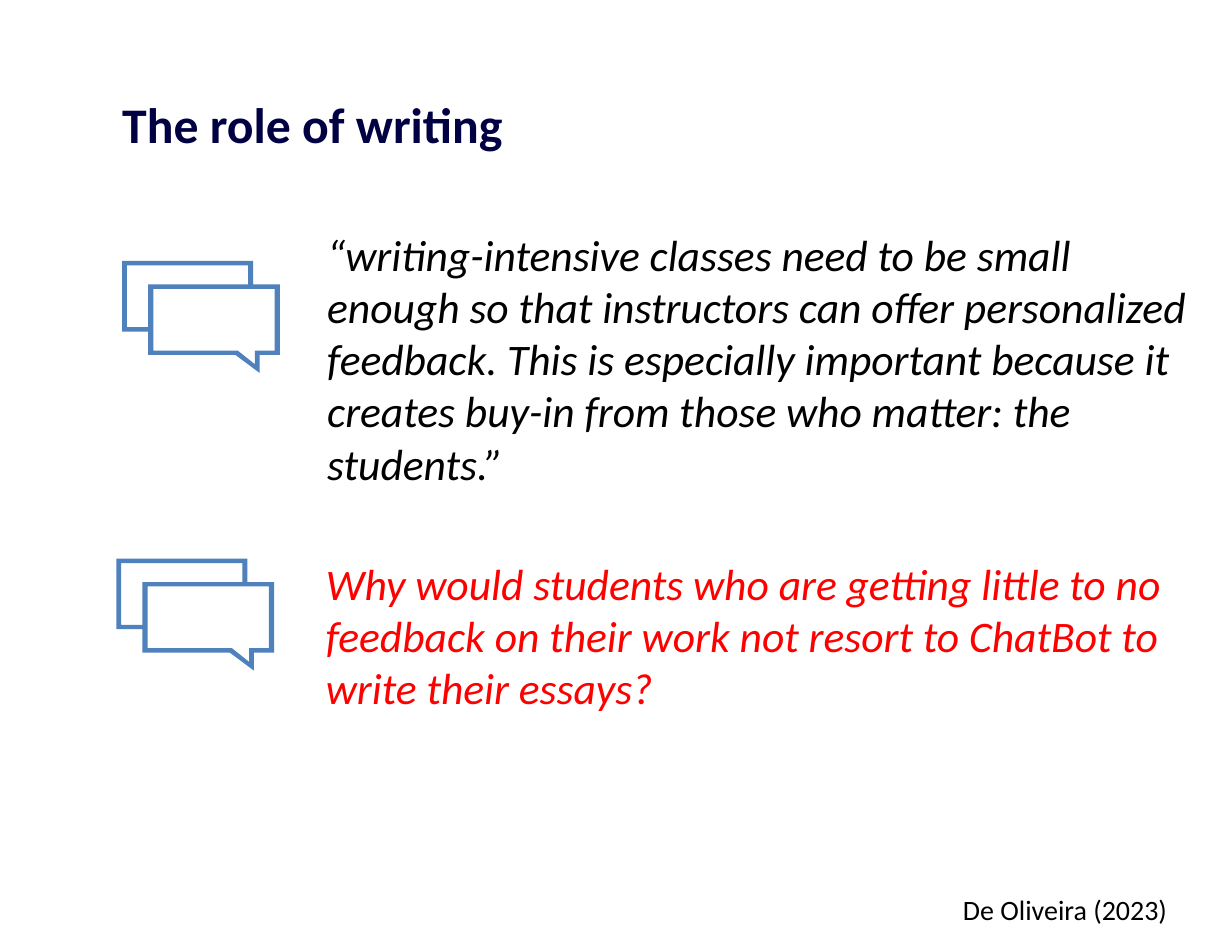
from lxml.etree import SubElement
from pptx import Presentation
from pptx.dml.color import RGBColor
from pptx.enum.text import MSO_ANCHOR, MSO_AUTO_SIZE, PP_ALIGN
from pptx.oxml.ns import qn
from pptx.util import Cm, Pt

COLORS = {"navy": "000043", "black": "000000", "red": "FF0000", "blue": "4F81BD"}

TITLE = "The role of writing"
QUOTE = (
    "“writing-intensive classes need to be small enough so that instructors "
    "can offer personalized feedback. This is especially important because it "
    "creates buy-in from those who matter: the students.”"
)
ASK = (
    "Why would students who are getting little to no feedback on their work "
    "not resort to ChatBot to write their essays?"
)
SOURCE = "De Oliveira (2023)"

# Left and top of each pair of speech bubbles, in cm
ICONS = [(2.77, 5.92), (2.64, 12.67)]

# Outer edge and the two holes, in hundredths of a cm
BUBBLES = [
    [(297, 53), (297, 0), (0, 0), (0, 160), (59, 160), (59, 213),
     (257, 213), (312, 254), (312, 213), (358, 213), (358, 53)],
    [(59, 150), (11, 150), (11, 10), (286, 10), (286, 53), (59, 53)],
    [(346, 203), (301, 203), (301, 234), (262, 203), (71, 203),
     (71, 63), (346, 63)],
]


def write(shape, text, box, size=28, color="black", bold=False, italic=False,
          inset=None, wrap=True):
    """Place the shape at box (left, top, width, height in cm) and fill it."""
    shape.left, shape.top, shape.width, shape.height = map(Cm, box)
    frame = shape.text_frame
    frame.word_wrap = wrap
    frame.auto_size = MSO_AUTO_SIZE.NONE
    frame.vertical_anchor = MSO_ANCHOR.TOP
    if inset is not None:
        frame.margin_left = frame.margin_right = Cm(inset)
        frame.margin_top = frame.margin_bottom = Cm(inset)
    para = frame.paragraphs[0]
    para.alignment = PP_ALIGN.LEFT
    para.space_before = Pt(0)
    run = para.add_run()
    run.text = text
    font = run.font
    font.name, font.size = "Calibri", Pt(size)
    font.bold, font.italic = bold, italic
    font.color.rgb = RGBColor.from_string(COLORS[color])
    return para


def unmark(para):
    """Drop the bullet and hanging indent of a body paragraph."""
    props = para._p.get_or_add_pPr()
    props.set("marL", "0")
    props.set("indent", "0")
    SubElement(props, qn("a:buNone"))


def draw(shapes, left, top):
    outer, *holes = BUBBLES
    pen = shapes.build_freeform(*outer[0], scale=Cm(0.01))
    pen.add_line_segments(outer[1:], close=True)
    for hole in holes:
        pen.move_to(*hole[0])
        pen.add_line_segments(hole[1:], close=True)
    icon = pen.convert_to_shape(Cm(left), Cm(top))
    icon.shadow.inherit = False
    icon.fill.solid()
    icon.fill.fore_color.rgb = RGBColor.from_string(COLORS["blue"])
    icon.line.fill.background()


def main():
    deck = Presentation()
    deck.slide_width, deck.slide_height = Cm(27.94), Cm(21.59)
    slide = deck.slides.add_slide(deck.slide_layouts[1])
    shapes = slide.shapes

    write(shapes.title, TITLE, (2.77, 2.13, 22.43, 2.74),
          size=32, color="navy", bold=True, inset=0)
    quote = write(slide.placeholders[1], QUOTE, (7.42, 5.16, 19.89, 5.99),
                  italic=True, inset=0)
    unmark(quote)

    ask = shapes.add_textbox(0, 0, 0, 0)
    write(ask, ASK, (7.14, 12.5, 20.12, 4.88), color="red", italic=True)
    note = shapes.add_textbox(0, 0, 0, 0)
    write(note, SOURCE, (21.59, 20.12, 5.21, 1.02), size=18, wrap=False)

    for left, top in ICONS:
        draw(shapes, left, top)
    deck.save("out.pptx")


if __name__ == "__main__":
    main()
